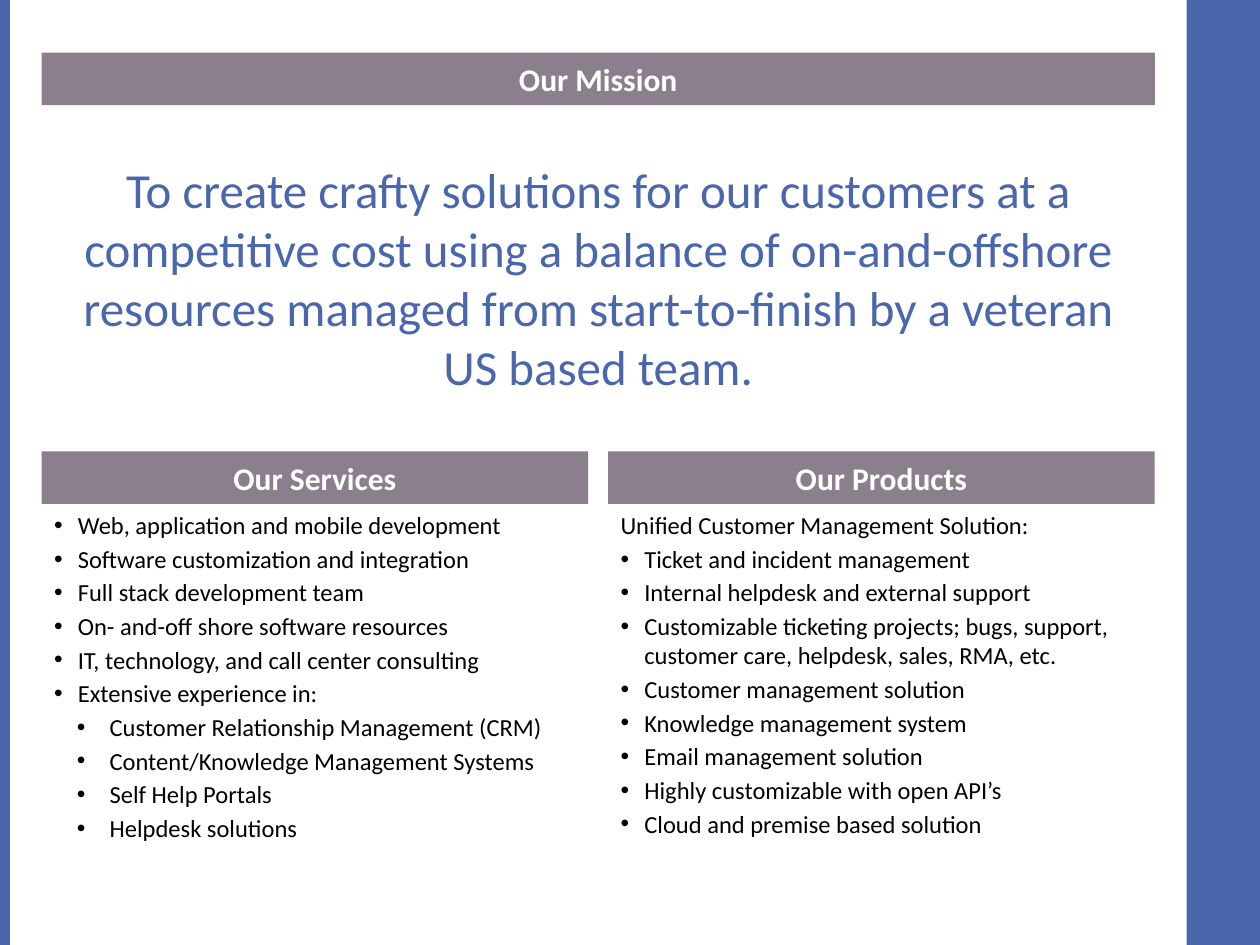
"""Build a company overview slide with a mission, services and products."""
from lxml import etree
from pptx import Presentation
from pptx.dml.color import RGBColor
from pptx.enum.shapes import MSO_SHAPE
from pptx.enum.text import MSO_ANCHOR, MSO_AUTO_SIZE, PP_ALIGN
from pptx.oxml.ns import qn
from pptx.util import Cm, Pt

RECTANGLE = MSO_SHAPE.RECTANGLE
TOP, MIDDLE = MSO_ANCHOR.TOP, MSO_ANCHOR.MIDDLE
LEFT, CENTER = PP_ALIGN.LEFT, PP_ALIGN.CENTER
NO_AUTOFIT = MSO_AUTO_SIZE.NONE

BLUE = RGBColor(0x4A, 0x66, 0xAC)
MAUVE = RGBColor(0x8B, 0x7F, 0x8D)
WHITE = RGBColor(0xFF, 0xFF, 0xFF)
BLACK = RGBColor(0x00, 0x00, 0x00)
FONT = "Calibri"

TITLE = "Our Mission"
MISSION = (
    "To create crafty solutions for our customers at a competitive cost using "
    "a balance of on-and-offshore resources managed from start-to-finish by a "
    "veteran US based team."
)
PLAIN, BULLET, SUB_BULLET = range(3)
COLUMNS = [
    ("Our Services", [
        (BULLET, "Web, application and mobile development"),
        (BULLET, "Software customization and integration"),
        (BULLET, "Full stack development team"),
        (BULLET, "On- and-off shore software resources"),
        (BULLET, "IT, technology, and call center consulting"),
        (BULLET, "Extensive experience in:"),
        (SUB_BULLET, "Customer Relationship Management (CRM)"),
        (SUB_BULLET, "Content/Knowledge Management Systems"),
        (SUB_BULLET, "Self Help Portals"),
        (SUB_BULLET, "Helpdesk solutions"),
    ]),
    ("Our Products", [
        (PLAIN, "Unified Customer Management Solution:"),
        (BULLET, "Ticket and incident management"),
        (BULLET, "Internal helpdesk and external support"),
        (BULLET, "Customizable ticketing projects; bugs, support, customer care, "
                 "helpdesk, sales, RMA, etc."),
        (BULLET, "Customer management solution"),
        (BULLET, "Knowledge management system"),
        (BULLET, "Email management solution"),
        (BULLET, "Highly customizable with open API’s"),
        (BULLET, "Cloud and premise based solution"),
    ]),
]
INDENTS = {BULLET: (0.48, 0.48), SUB_BULLET: (1.12, 0.66)}

SLIDE_WIDTH, SLIDE_HEIGHT = 25.4, 19.05
LEFT_RAIL, RIGHT_RAIL = 0.2, 1.48
MARGIN, CONTENT_WIDTH = 0.84, 22.44
COLUMN_GAP = 0.4
COLUMN_WIDTH = (CONTENT_WIDTH - COLUMN_GAP) / 2
BAR_HEIGHT = 1.06
TITLE_TOP, MISSION_TOP, COLUMNS_TOP = 1.06, 3.1, 9.1
MISSION_HEIGHT, LIST_HEIGHT = 5.2, 7.2


def place(shape, left, top, width, height):
    shape.left, shape.top = Cm(left), Cm(top)
    shape.width, shape.height = Cm(width), Cm(height)


def add_rectangle(slide, color, *box):
    shape = slide.shapes.add_shape(RECTANGLE, *map(Cm, box))
    shape.shadow.inherit = False
    shape.fill.solid()
    shape.fill.fore_color.rgb = color
    shape.line.fill.background()
    return shape


def prepare_frame(shape, anchor):
    frame = shape.text_frame
    frame.word_wrap = True
    frame.auto_size = NO_AUTOFIT
    frame.vertical_anchor = anchor
    return frame


def write(paragraph, text, size, color, alignment=CENTER, bold=False):
    paragraph.alignment = alignment
    run = paragraph.add_run()
    run.text = text
    run.font.name = FONT
    run.font.size = Pt(size)
    run.font.bold = bold
    run.font.color.rgb = color


def write_heading(shape, text):
    frame = prepare_frame(shape, MIDDLE)
    write(frame.paragraphs[0], text, 18, WHITE, bold=True)


def add_bullet(paragraph, kind):
    margin, hanging = INDENTS[kind]
    paragraph.level = kind - BULLET
    properties = paragraph._p.get_or_add_pPr()
    properties.set("marL", str(Cm(margin)))
    properties.set("indent", str(-Cm(hanging)))
    etree.SubElement(properties, qn("a:buFont"), typeface="Arial")
    etree.SubElement(properties, qn("a:buChar"), char="•")


def add_list(slide, items, *box):
    frame = prepare_frame(slide.shapes.add_textbox(*map(Cm, box)), TOP)
    for index, (kind, text) in enumerate(items):
        paragraph = frame.add_paragraph() if index else frame.paragraphs[0]
        if kind != PLAIN:
            add_bullet(paragraph, kind)
        if index:
            paragraph.space_before = Pt(2.4)
        write(paragraph, text, 14, BLACK, LEFT)


def main():
    presentation = Presentation()
    presentation.slide_width = Cm(SLIDE_WIDTH)
    presentation.slide_height = Cm(SLIDE_HEIGHT)
    slide = presentation.slides.add_slide(presentation.slide_layouts[5])

    add_rectangle(slide, BLUE, SLIDE_WIDTH - RIGHT_RAIL, 0, RIGHT_RAIL, SLIDE_HEIGHT)
    add_rectangle(slide, BLUE, 0, 0, LEFT_RAIL, SLIDE_HEIGHT)

    title = slide.shapes.title
    place(title, MARGIN, TITLE_TOP, CONTENT_WIDTH, BAR_HEIGHT)
    title.fill.solid()
    title.fill.fore_color.rgb = MAUVE
    write_heading(title, TITLE)

    mission_box = (MARGIN, MISSION_TOP, CONTENT_WIDTH, MISSION_HEIGHT)
    mission = slide.shapes.add_textbox(*map(Cm, mission_box))
    write(prepare_frame(mission, TOP).paragraphs[0], MISSION, 28, BLUE)

    for index, (heading, items) in enumerate(COLUMNS):
        left = MARGIN + index * (COLUMN_WIDTH + COLUMN_GAP)
        bar = add_rectangle(slide, MAUVE, left, COLUMNS_TOP, COLUMN_WIDTH, BAR_HEIGHT)
        write_heading(bar, heading)
        add_list(slide, items, left, COLUMNS_TOP + BAR_HEIGHT, COLUMN_WIDTH, LIST_HEIGHT)

    presentation.save("out.pptx")


if __name__ == "__main__":
    main()
